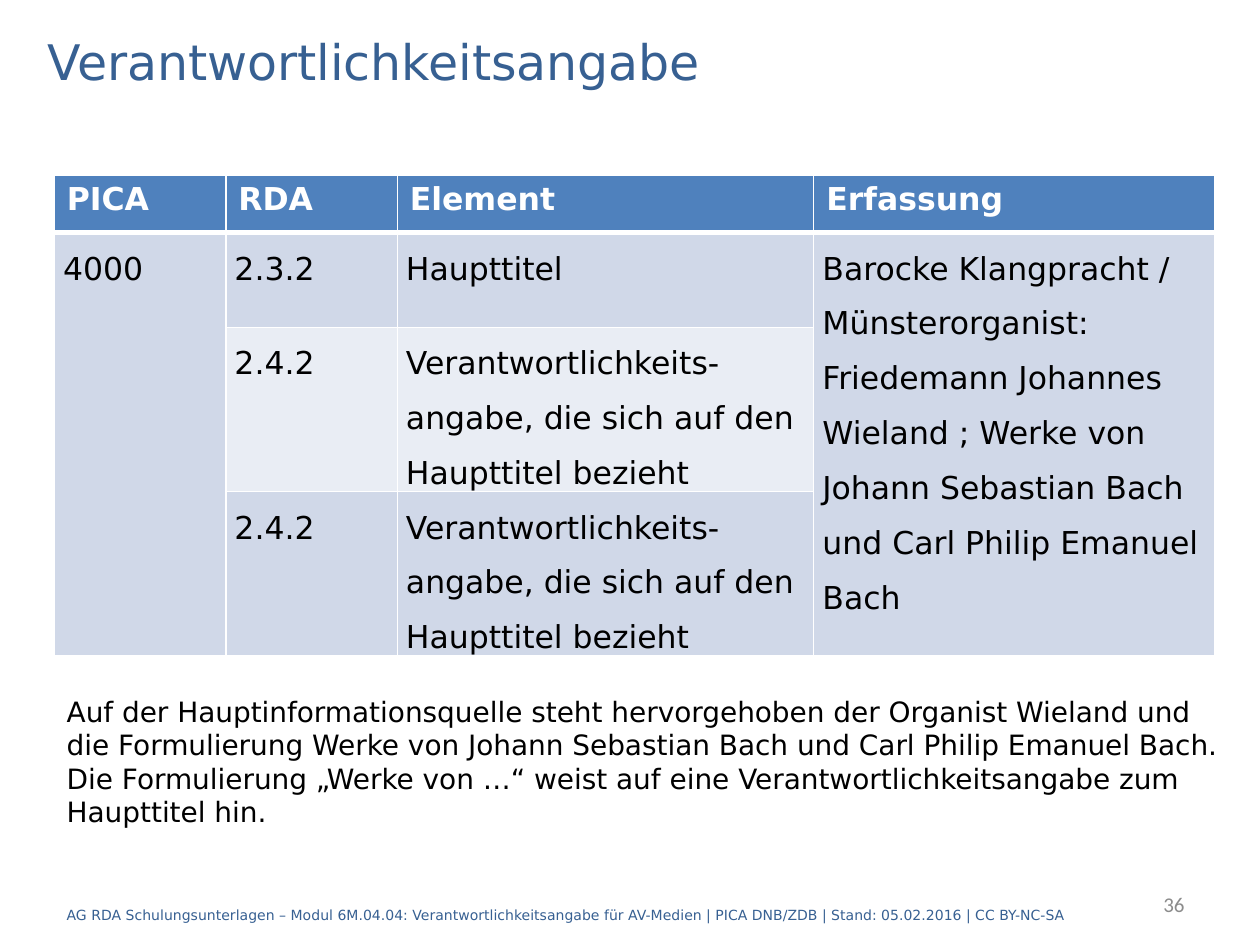
from dataclasses import dataclass

from lxml.etree import SubElement
from pptx import Presentation
from pptx.dml.color import RGBColor
from pptx.enum.text import MSO_ANCHOR, PP_ALIGN
from pptx.oxml.ns import qn
from pptx.util import Pt


@dataclass(frozen=True)
class Theme:
    """Colours, fonts and type sizes of the slide."""
    font: str = "DejaVu Sans"
    number_font: str = "Calibri"
    title: str = "376092"
    header: str = "4F81BD"
    bands: tuple = ("D0D8E8", "E9EDF4")
    white: str = "FFFFFF"
    black: str = "000000"
    grey: str = "8C8C8C"
    title_size: int = 28
    table_size: int = 18
    note_size: int = 16
    footer_size: int = 8
    number_size: int = 12


THEME = Theme()
COLUMN_WIDTHS = (98, 98, 238, 229)
ROW_HEIGHTS = (33, 54, 54, 54)
RESPONSIBILITY = "Verantwortlichkeits-angabe, die sich auf den Haupttitel bezieht"
ROWS = (
    ("PICA", "RDA", "Element", "Erfassung"),
    ("4000", "2.3.2", "Haupttitel",
     "Barocke Klangpracht / Münsterorganist: Friedemann Johannes Wieland ; "
     "Werke von Johann Sebastian Bach und Carl Philip Emanuel Bach"),
    ("", "2.4.2", RESPONSIBILITY, ""),
    ("", "2.4.2", RESPONSIBILITY, ""),
)
NOTE = (
    "Auf der Hauptinformationsquelle steht hervorgehoben der Organist Wieland und "
    "die Formulierung Werke von Johann Sebastian Bach und Carl Philip Emanuel Bach. "
    "Die Formulierung „Werke von …“ weist auf eine Verantwortlichkeitsangabe zum "
    "Haupttitel hin."
)
FOOTER = (
    "AG RDA Schulungsunterlagen – Modul 6M.04.04: Verantwortlichkeitsangabe für "
    "AV-Medien | PICA DNB/ZDB | Stand: 05.02.2016 | CC BY-NC-SA"
)


def format_font(font, size, color, name=THEME.font, bold=False):
    """Apply typeface, size, colour and weight to a font."""
    font.name, font.size, font.bold = name, Pt(size), bold
    font.color.rgb = RGBColor.from_string(color)


def add_text(slide, box, text, size, color, name=THEME.font, align=PP_ALIGN.LEFT):
    """Add a wrapped, vertically centred line of text and return its frame."""
    text_frame = slide.shapes.add_textbox(*map(Pt, box)).text_frame
    text_frame.word_wrap = True
    text_frame.vertical_anchor = MSO_ANCHOR.MIDDLE
    text_frame.text = text
    paragraph = text_frame.paragraphs[0]
    paragraph.alignment = align
    format_font(paragraph.runs[0].font, size, color, name)
    return text_frame


def add_borders(cell, widths):
    """Draw white cell borders with the given widths by side."""
    properties = cell._tc.get_or_add_tcPr()
    for side in "LRTB":
        line = SubElement(properties, qn(f"a:ln{side}"), w=str(Pt(widths[side])))
        fill = SubElement(line, qn("a:solidFill"))
        SubElement(fill, qn("a:srgbClr"), val=THEME.white)


def style_cell(cell, row):
    """Style a header or body cell according to its row."""
    is_header = row == 0
    add_borders(cell, {"L": 1, "R": 1, "T": 3 if row == 1 else 1, "B": 3 if is_header else 1})
    cell.fill.solid()
    color = THEME.header if is_header else THEME.bands[(row - 1) % 2]
    cell.fill.fore_color.rgb = RGBColor.from_string(color)
    paragraph = cell.text_frame.paragraphs[0]
    if not is_header:
        cell.margin_left = cell.margin_right = Pt(5)
        cell.margin_top = cell.margin_bottom = Pt(0)
        paragraph.line_spacing = 1.5
        paragraph.space_after = Pt(6)
    format_font(paragraph.font, THEME.table_size, THEME.black)
    for run in paragraph.runs:
        format_font(run.font, THEME.table_size,
                    THEME.white if is_header else THEME.black, bold=is_header)


def add_element_table(slide, left, top):
    """Add the table of catalogue elements with its top left corner at a point."""
    table = slide.shapes.add_table(
        len(ROWS), len(COLUMN_WIDTHS), Pt(left), Pt(top),
        Pt(sum(COLUMN_WIDTHS)), Pt(sum(ROW_HEIGHTS))).table
    for column, width in zip(table.columns, COLUMN_WIDTHS):
        column.width = Pt(width)
    for row, height in zip(table.rows, ROW_HEIGHTS):
        row.height = Pt(height)
    for row, texts in enumerate(ROWS):
        for column, text in enumerate(texts):
            cell = table.cell(row, column)
            cell.text_frame.text = text
            style_cell(cell, row)
    for column in (0, 3):
        table.cell(1, column).merge(table.cell(3, column))


def add_note(slide, box):
    """Add the explanation, raised slightly within its box."""
    text_frame = add_text(slide, box, NOTE, THEME.note_size, THEME.black)
    text_frame.margin_bottom = Pt(24.6)


def add_footer(slide, left, top):
    """Add the footer line and the slide number."""
    add_text(slide, (left, top + 6.5, 629, 29), FOOTER, THEME.footer_size, THEME.title)
    add_text(slide, (left + 538.5, top, 114.5, 29), "36", THEME.number_size,
             THEME.grey, THEME.number_font, PP_ALIGN.RIGHT)


def main():
    """Build and save the presentation."""
    presentation = Presentation()
    presentation.slide_width, presentation.slide_height = Pt(720), Pt(540)
    slide = presentation.slides.add_slide(presentation.slide_layouts[6])
    add_element_table(slide, 31, 100)
    add_text(slide, (20, 14.5, 680, 40), "Verantwortlichkeitsangabe",
             THEME.title_size, THEME.title)
    add_note(slide, (31, 425.5, 680, 40))
    add_footer(slide, 31, 502)
    presentation.save("out.pptx")


if __name__ == "__main__":
    main()
